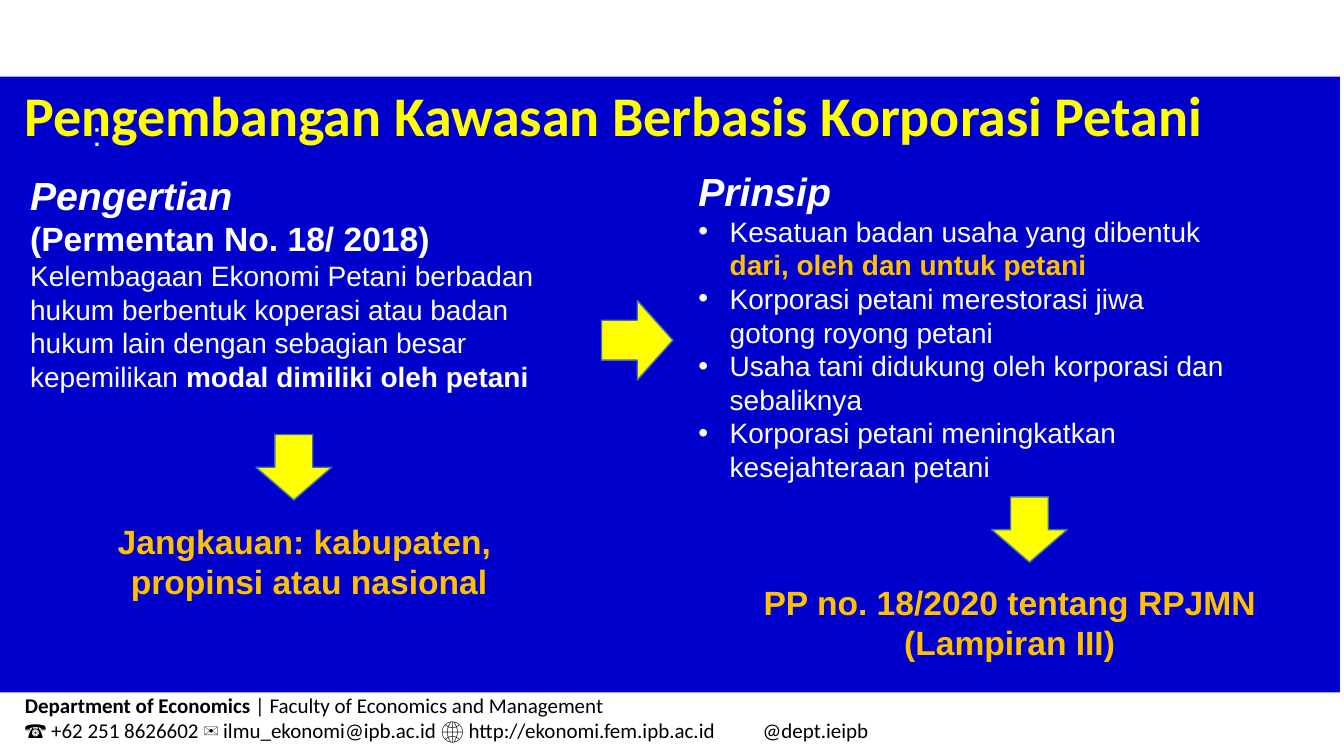
from lxml import etree
from pptx import Presentation
from pptx import util as u
from pptx.dml import color
from pptx.enum import shapes, text
from pptx.oxml import ns

Cm = u.Cm
WHITE, YELLOW, GOLD, BLUE = "FFFFFF", "FFFF00", "FFC000", "0000CC"
LEFT, MID, JUST = text.PP_ALIGN.LEFT, text.PP_ALIGN.CENTER, text.PP_ALIGN.JUSTIFY


def rgb(code):
    return color.RGBColor.from_string(code)


def add_run(para, words, size, hue=WHITE, bold=False, slant=False, face="Arial"):
    run = para.add_run()
    run.text = words
    font = run.font
    font.name, font.size = face, u.Pt(size)
    font.bold, font.italic = bold, slant
    font.color.rgb = rgb(hue)


def add_text(slide, box, wrap=True):
    frame = slide.shapes.add_textbox(*map(Cm, box)).text_frame
    frame.word_wrap = wrap
    return frame


def add_para(frame, align=LEFT):
    first = frame.paragraphs[0]
    para = frame.add_paragraph() if first.runs else first
    para.alignment = align
    return para


def add_dot(para):
    props = para._p.get_or_add_pPr()
    props.set("marL", str(Cm(0.79)))
    props.set("indent", str(-Cm(0.79)))
    etree.SubElement(props, ns.qn("a:buFont")).set("typeface", "Arial")
    etree.SubElement(props, ns.qn("a:buChar")).set("char", "•")


def add_form(slide, kind, box, fill, edge=None):
    form = slide.shapes.add_shape(kind, *map(Cm, box))
    form.shadow.inherit = False
    form.fill.solid()
    form.fill.fore_color.rgb = rgb(fill)
    if edge:
        form.line.color.rgb = rgb(edge)
        form.line.width = u.Pt(1)
    else:
        form.line.fill.background()


def add_arrow(slide, kind, box):
    add_form(slide, kind, box, YELLOW, "43739E")


def add_result(slide, box, lines, wrap=True):
    frame = add_text(slide, box, wrap)
    for line in lines:
        add_run(add_para(frame, MID), line, 24, GOLD, True)


def draw_footer(slide, box):
    frame = add_text(slide, box)
    para = add_para(frame)
    add_run(para, "Department of Economics ", 15, "000000", True, face="Calibri")
    add_run(para, "| Faculty of Economics and Management", 15, "000000", face="Calibri")
    para = add_para(frame)
    tabs = etree.SubElement(para._p.get_or_add_pPr(), ns.qn("a:tabLst"))
    stop = etree.SubElement(tabs, ns.qn("a:tab"))
    stop.set("pos", str(Cm(18.59)))
    stop.set("algn", "l")
    for words, bold in (
        ("☎ +62 251 8626602 ✉ ilmu_ekonomi@ipb.ac.id ", False),
        ("🌐 ", True),
        ("http://ekonomi.fem.ipb.ac.id\t@dept.ieipb", False),
    ):
        add_run(para, words, 15, "000000", bold, face="Calibri")


def draw_head(slide, box):
    x, y, w, h = box
    para = add_para(add_text(slide, box))
    add_run(para, "Pengembangan Kawasan Berbasis Korporasi Petani", 40, YELLOW, True, face="Calibri")
    mark = add_text(slide, (x + 1.72, y + 0.82, w - 1.62, 1.27))
    add_run(add_para(mark), ":", 24)


def draw_meaning(slide, box):
    x, y, w, h = box
    frame = add_text(slide, (x, y, w, 6.76))
    add_run(add_para(frame), "Pengertian", 28, bold=True, slant=True)
    add_run(add_para(frame), "(Permentan No. 18/ 2018)", 24, bold=True)
    para = add_para(frame)
    add_run(para, "Kelembagaan Ekonomi Petani berbadan hukum berbentuk koperasi atau badan "
            "hukum lain dengan sebagian besar kepemilikan ", 20)
    add_run(para, "modal dimiliki oleh petani", 20, bold=True)
    add_arrow(slide, shapes.MSO_SHAPE.DOWN_ARROW, (x + 5.94, y + 6.76, 1.91, 1.65))
    add_result(slide, (x + 2.16, y + 8.81, 10.24, 2.31),
               ("Jangkauan: kabupaten, ", "propinsi atau nasional"), False)


def draw_rules(slide, box):
    x, y, w, h = box
    frame = add_text(slide, (x, y, w, 8.28))
    add_run(add_para(frame, JUST), "Prinsip", 28, bold=True, slant=True)
    for words, accent in (
        ("Kesatuan badan usaha yang dibentuk ", "dari, oleh dan untuk petani"),
        ("Korporasi petani merestorasi jiwa gotong royong petani", ""),
        ("Usaha tani didukung oleh korporasi dan sebaliknya", ""),
        ("Korporasi petani meningkatkan kesejahteraan petani", ""),
    ):
        para = add_para(frame)
        add_dot(para)
        add_run(para, words, 20)
        if accent:
            add_run(para, accent, 20, GOLD, True)
    add_arrow(slide, shapes.MSO_SHAPE.DOWN_ARROW, (x + 7.64, y + 8.43, 1.91, 1.65))
    add_result(slide, (x + 0.79, y + 10.44, 14.61, 2.31),
               ("PP no. 18/2020 tentang RPJMN", "(Lampiran III)"))


def main():
    deck = Presentation()
    deck.slide_width, deck.slide_height = Cm(33.87), Cm(19.05)
    slide = deck.slides.add_slide(deck.slide_layouts[6])
    draw_footer(slide, (0.38, 17.32, 24.84, 1.55))
    add_form(slide, shapes.MSO_SHAPE.RECTANGLE, (-0.1, 1.93, 33.87, 15.52), BLUE)
    draw_head(slide, (0.36, 1.9, 32.74, 1.96))
    draw_meaning(slide, (0.51, 4.19, 13.79, 11.12))
    add_arrow(slide, shapes.MSO_SHAPE.RIGHT_ARROW, (15.16, 7.57, 1.8, 2.01))
    draw_rules(slide, (17.35, 4.09, 14, 12.75))
    deck.save("out.pptx")


if __name__ == "__main__":
    main()
